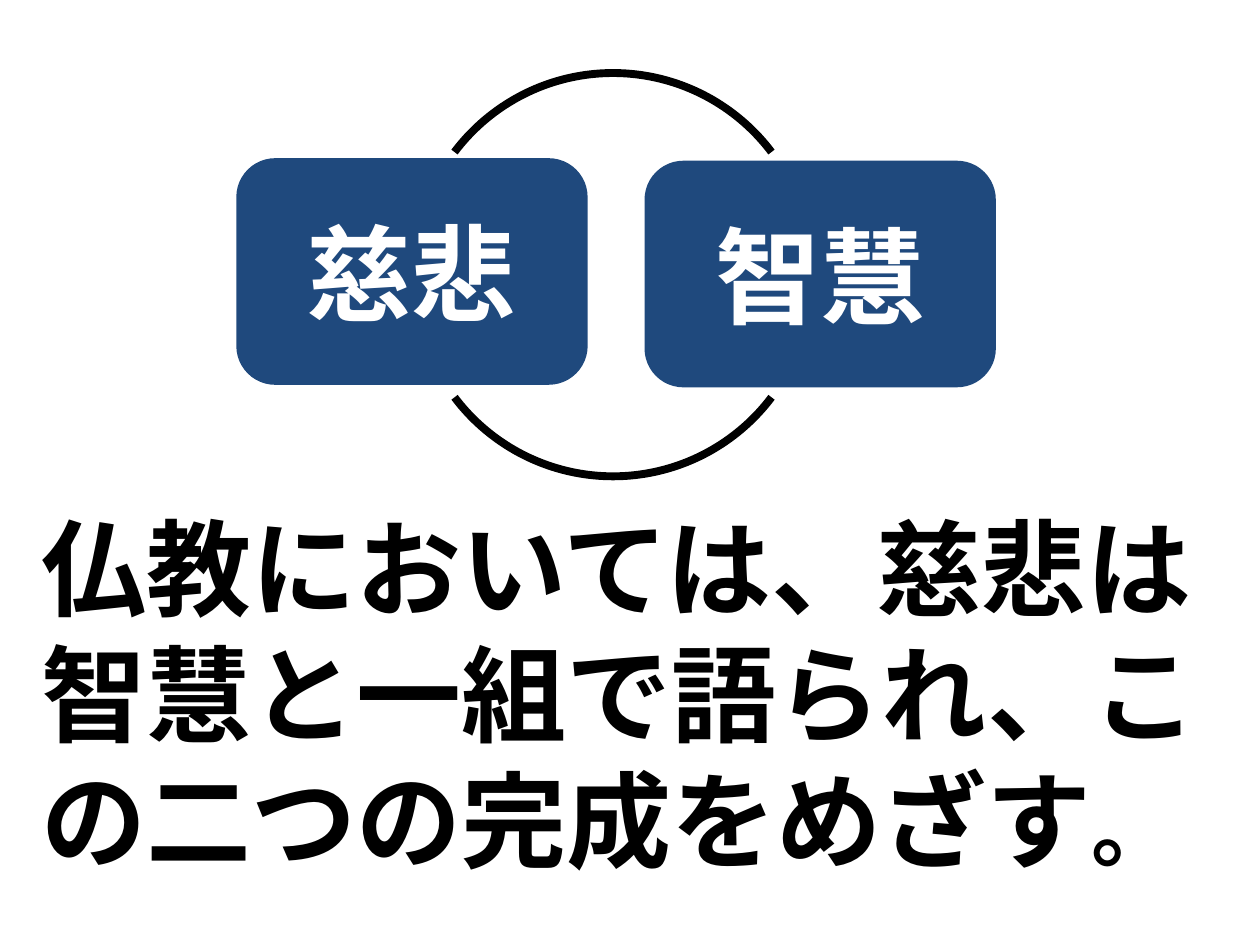
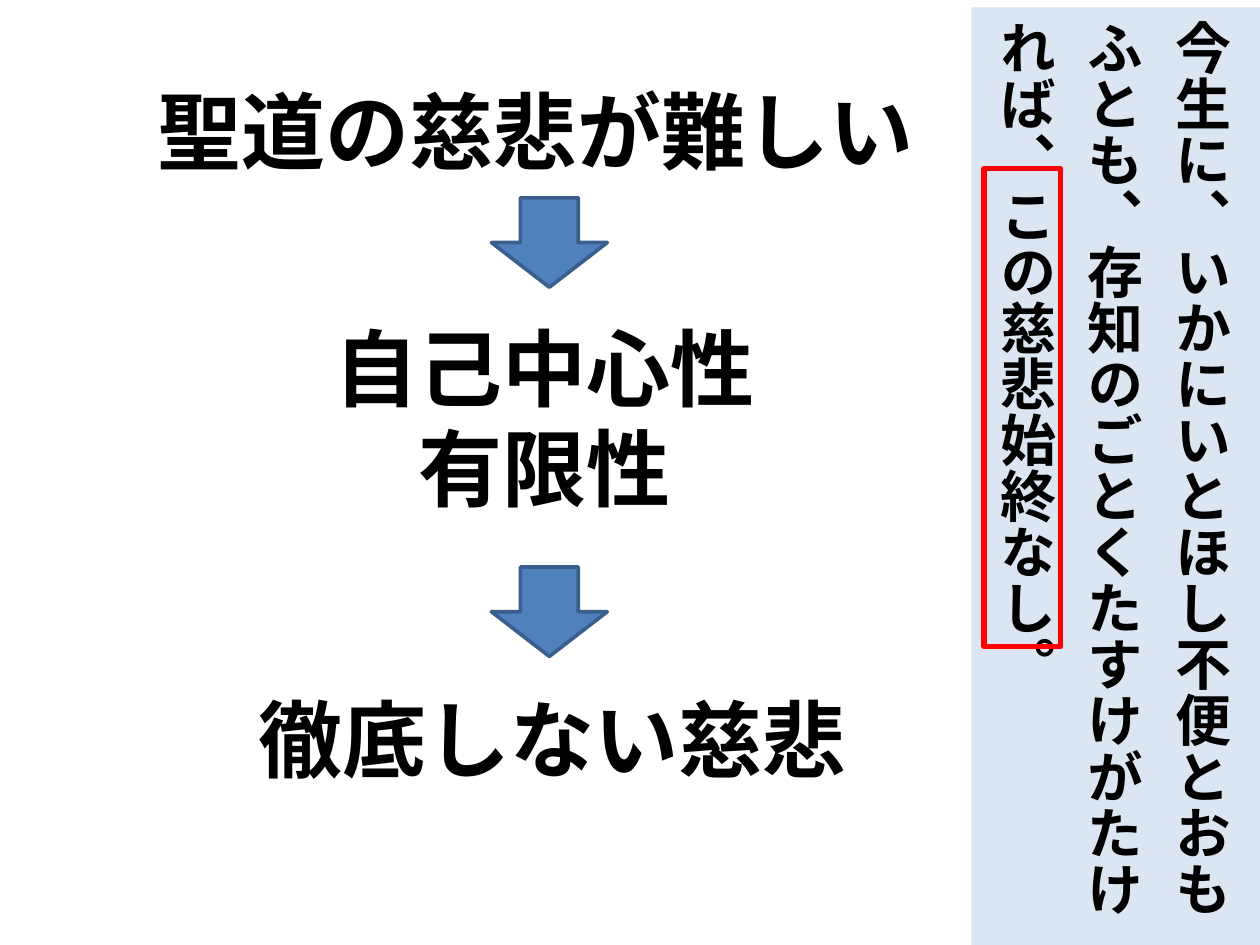
"""Build two slides on compassion and wisdom in Buddhism."""
from pptx import Presentation
from pptx import util as u
from pptx.dml.color import RGBColor
from pptx.enum import lang, shapes, text

COLORS = {"navy": "1F497D", "blue": "4F81BD", "edge": "3A5F8C", "pale": "DCE6F2",
          "red": "FF0000", "black": "000000", "white": "FFFFFF"}
FONT = {"name": "Calibri", "bold": True, "language_id": lang.MSO_LANGUAGE_ID.JAPANESE}
SHAPE = shapes.MSO_SHAPE
LEFT, CENTER = text.PP_ALIGN.LEFT, text.PP_ALIGN.CENTER
TOP, MIDDLE = text.MSO_ANCHOR.TOP, text.MSO_ANCHOR.MIDDLE
GROW = text.MSO_AUTO_SIZE.SHAPE_TO_FIT_TEXT


class Deck:
    """Holds the presentation, its shared style and the current slide."""

    def __init__(self):
        self.presentation = Presentation()
        self.presentation.slide_width = u.Inches(10)
        self.presentation.slide_height = u.Inches(7.5)
        self.slide = None

    def new_slide(self):
        self.slide = self.presentation.slides.add_slide(self.presentation.slide_layouts[6])

    def fill_text(self, shape, paragraphs, color="black", align=LEFT, spacing=None, **frame_format):
        frame = shape.text_frame
        for name, value in {"word_wrap": True, "vertical_anchor": TOP, **frame_format}.items():
            setattr(frame, name, value)
        for index, runs in enumerate(paragraphs):
            paragraph = frame.paragraphs[0] if index == 0 else frame.add_paragraph()
            paragraph.alignment = align
            paragraph.line_spacing = spacing
            for words, size in runs:
                run = paragraph.add_run()
                run.text = words
                for name, value in {**FONT, "size": u.Pt(size)}.items():
                    setattr(run.font, name, value)
                run.font.color.rgb = RGBColor.from_string(COLORS[color])

    def text_box(self, box, paragraphs, align=LEFT):
        shape = self.slide.shapes.add_textbox(*map(u.Inches, box))
        self.fill_text(shape, paragraphs, align=align, auto_size=GROW)

    def shape(self, kind, box, fill=None, line=None, width=2.08):
        shape = self.slide.shapes.add_shape(kind, *map(u.Inches, box))
        shape.shadow.inherit = False
        if fill:
            shape.fill.solid()
            shape.fill.fore_color.rgb = RGBColor.from_string(COLORS[fill])
        else:
            shape.fill.background()
        if line:
            shape.line.color.rgb = RGBColor.from_string(COLORS[line])
            shape.line.width = u.Pt(width)
        else:
            shape.line.fill.background()
        return shape

    def concept(self, left, top, word):
        shape = self.shape(SHAPE.ROUNDED_RECTANGLE, (left, top, 2.76, 1.77), "navy", "navy")
        self.fill_text(shape, [[(word, 60)]], "white", CENTER, vertical_anchor=MIDDLE)

    def arc(self, top, rotation):
        shape = self.shape(SHAPE.ARC, (3.29, top, 3.15, 3.15), line="black", width=4.5)
        for index, degrees in enumerate((217, 323)):
            shape.adjustments[index] = degrees * 60000 / 100000
        shape.rotation = rotation

    def vertical_quote(self, box, paragraphs):
        shape = self.shape(SHAPE.RECTANGLE, box, "pale")
        self.fill_text(shape, paragraphs, spacing=1.3, auto_size=GROW)
        shape.text_frame._txBody.bodyPr.set("vert", "eaVert")


def main():
    deck = Deck()

    deck.new_slide()
    deck.text_box((0.23, 3.95, 9.45, 3.13), [[
        ("仏教においては、慈悲は智慧と一組で語られ、この二つの完成をめざす", 60), ("。", 48)]])
    deck.concept(5.13, 1.29, "智慧")
    deck.concept(1.89, 1.27, "慈悲")
    for top, rotation in ((0.58, 0), (0.63, 180)):
        deck.arc(top, rotation)

    deck.new_slide()
    deck.vertical_quote((7.71, 0.06, 2.3, 7.44), [
        [("今生に、いかにいとほし不便とおも", 32)],
        [("ふとも、存知のごとくたすけがたければ、この慈悲始終なし。", 32)]])
    deck.text_box((1.15, 0.58, 6.35, 0.91), [[("聖道の慈悲が難しい", 48)]])
    deck.text_box((2.18, 2.46, 4.28, 1.72), [[("自己中心性", 48)], [("有限性", 48)]], CENTER)
    deck.text_box((1.95, 5.41, 5.02, 0.91), [[("徹底しない慈悲", 48)]])
    for top in (1.57, 4.5):
        deck.shape(SHAPE.DOWN_ARROW, (3.9, top, 0.92, 0.71), "blue", "edge")
    deck.shape(SHAPE.RECTANGLE, (7.81, 1.34, 0.61, 3.79), line="red", width=3)

    deck.presentation.save("out.pptx")


if __name__ == "__main__":
    main()
